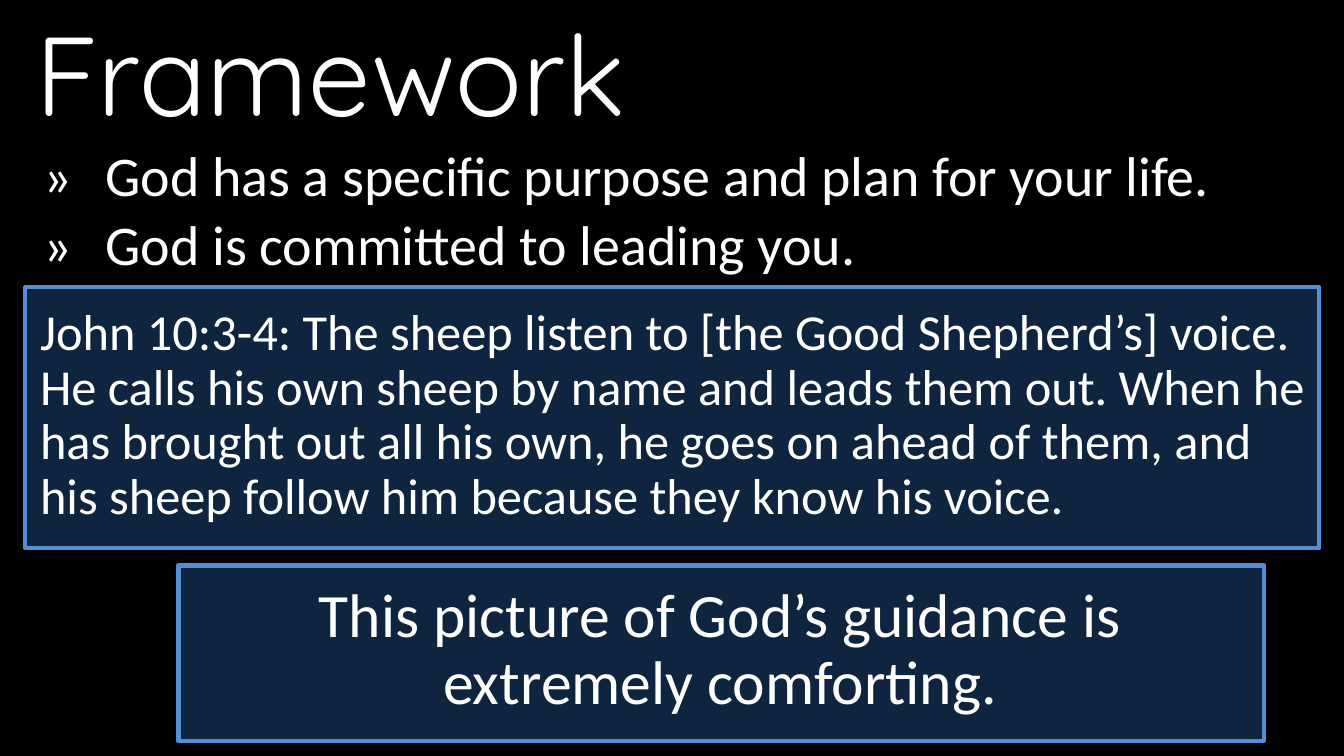
from dataclasses import dataclass

import pptx
import pptx.dml.color
import pptx.enum.shapes
import pptx.enum.text
import pptx.util
from pptx.util import Cm


@dataclass(frozen=True)
class Theme:
    background: str = "000000"
    text: str = "FFFFFF"
    panel: str = "0F243E"
    border: str = "558ED5"
    heading_font: str = "Quicksand"
    body_font: str = "Calibri"
    title_size: int = 80
    statement_size: int = 44
    bullet_size: int = 40
    verse_size: int = 36
    border_width: int = 3


THEME = Theme()
ALIGN = pptx.enum.text.PP_ALIGN


def rgb(value):
    return pptx.dml.color.RGBColor.from_string(value)


def apply_format(target, values):
    for name, value in values.items():
        setattr(target, name, value)


def add_panel(slide, left, top, width, height):
    """Add a dark rectangle with a bright border."""
    shape = slide.shapes.add_shape(
        pptx.enum.shapes.MSO_SHAPE.RECTANGLE,
        Cm(left), Cm(top), Cm(width), Cm(height))
    shape.shadow.inherit = False
    shape.fill.solid()
    shape.fill.fore_color.rgb = rgb(THEME.panel)
    shape.line.color.rgb = rgb(THEME.border)
    shape.line.width = pptx.util.Pt(THEME.border_width)


def add_text(slide, box, lines, size, font=THEME.body_font, hanging=0, **paragraph_format):
    """Add a wrapped text box with one paragraph per line."""
    frame = slide.shapes.add_textbox(*(Cm(length) for length in box)).text_frame
    apply_format(frame, {
        "word_wrap": True,
        "auto_size": pptx.enum.text.MSO_AUTO_SIZE.SHAPE_TO_FIT_TEXT,
    })
    for index, line in enumerate(lines):
        paragraph = frame.add_paragraph() if index else frame.paragraphs[0]
        apply_format(paragraph, paragraph_format)
        if hanging:
            properties = paragraph._p.get_or_add_pPr()
            properties.set("marL", str(Cm(hanging)))
            properties.set("indent", str(-Cm(hanging)))
        run = paragraph.add_run()
        run.text = line
        apply_format(run.font, {"name": font, "size": pptx.util.Pt(size)})
        run.font.color.rgb = rgb(THEME.text)


def main():
    presentation = pptx.Presentation()
    apply_format(presentation, {"slide_width": Cm(33.87), "slide_height": Cm(19.05)})
    slide = presentation.slides.add_slide(presentation.slide_layouts[6])
    slide.background.fill.solid()
    slide.background.fill.fore_color.rgb = rgb(THEME.background)

    body_format = {"line_spacing": 0.9, "space_after": pptx.util.Pt(3)}

    # Bullets and title
    points = ["God has a specific purpose and plan for your life.",
              "God is committed to leading you."]
    add_text(slide, (0.84, 3.61, 31.55, 3.56), [f"»\t{point}" for point in points],
             THEME.bullet_size, hanging=1.57,
             **{**body_format, "space_after": pptx.util.Pt(6)})
    add_text(slide, (0.64, 0, 30.48, 3.68), ["Framework"],
             THEME.title_size, THEME.heading_font)

    # Bible verse
    add_panel(slide, 0.64, 7.24, 32.61, 6.58)
    add_text(slide, (0.76, 7.62, 32.41, 5.79),
             ["John 10:3-4: The sheep listen to [the Good Shepherd’s] voice. "
              "He calls his own sheep by name and leads them out. "
              "When he has brought out all his own, he goes on ahead of them, "
              "and his sheep follow him because they know his voice."],
             THEME.verse_size, **body_format)

    # Closing statement
    add_panel(slide, 4.5, 14.25, 27.36, 4.42)
    add_text(slide, (4.5, 14.61, 27.31, 3.63),
             ["This picture of God’s guidance is extremely comforting."],
             THEME.statement_size, alignment=ALIGN.CENTER, **body_format)

    presentation.save("out.pptx")


if __name__ == "__main__":
    main()
